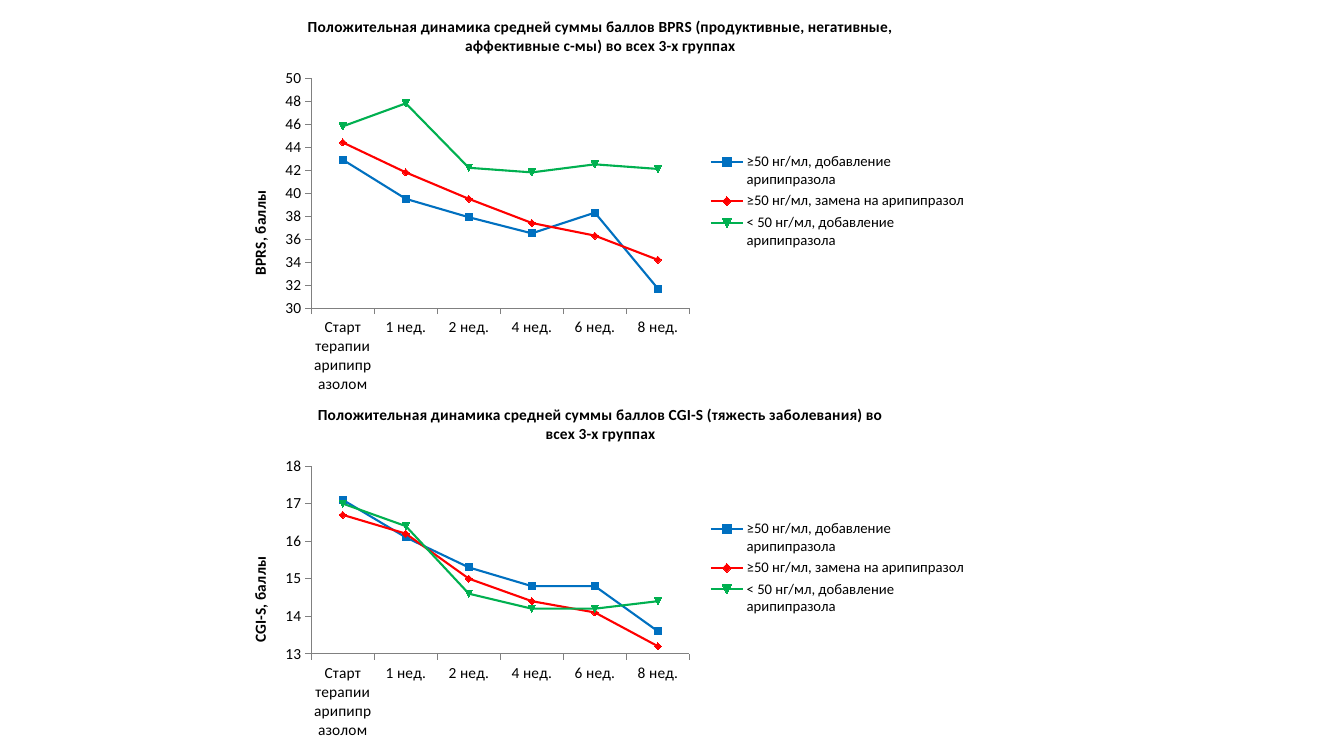
"""Builds a slide with two line charts of BPRS and CGI-S scores."""
from lxml.etree import SubElement
from pptx import Presentation
from pptx.chart.data import CategoryChartData
from pptx.dml.color import RGBColor
from pptx.enum.chart import XL_CHART_TYPE, XL_LEGEND_POSITION, XL_MARKER_STYLE, XL_TICK_MARK
from pptx.oxml.ns import qn
from pptx.util import Pt

COLORS = {"text": "000000", "axis": "808080", "blue": "0070C0", "red": "FF0000", "green": "00B050"}
WEEKS = ["Старт терапии арипипразолом"] + [f"{week} нед." for week in (1, 2, 4, 6, 8)]
GROUPS = {
    "≥50 нг/мл, добавление арипипразола": "blue",
    "≥50 нг/мл, замена на арипипразол": "red",
    "< 50 нг/мл, добавление арипипразола": "green",
}


class ScoreSlide:
    def __init__(self, slide, font="Calibri", size=11, legend_size=10.5):
        self.slide = slide
        self.font = font
        self.size = size
        self.legend_size = legend_size

    def color(self, name):
        return RGBColor.from_string(COLORS[name])

    def style(self, font, size, bold=False):
        font.name = self.font
        font.size = Pt(size)
        font.bold = bold
        font.color.rgb = self.color("text")

    def heading(self, owner, wording):
        owner.has_title = True
        run = owner.chart_title if hasattr(owner, "chart_title") else owner.axis_title
        run = run.text_frame.paragraphs[0].add_run()
        run.text = wording
        self.style(run.font, self.size, bold=True)

    def place(self, chart, xpath, index, **fractions):
        part = chart.element.xpath(xpath)[0]
        for old in part.findall(qn("c:layout")):
            part.remove(old)
        layout = SubElement(part, qn("c:layout"))
        part.insert(index, layout)
        manual = SubElement(layout, qn("c:manualLayout"))
        if "plotArea" in xpath and "title" not in xpath:
            SubElement(manual, qn("c:layoutTarget")).set("val", "inner")
        for side in ("x", "y"):
            SubElement(manual, qn(f"c:{side}Mode")).set("val", "edge")
        for side, fraction in fractions.items():
            SubElement(manual, qn(f"c:{side}")).set("val", str(fraction))

    def axis(self, axis):
        axis.has_major_gridlines = False
        axis.major_tick_mark = XL_TICK_MARK.OUTSIDE
        axis.minor_tick_mark = XL_TICK_MARK.NONE
        axis.format.line.color.rgb = self.color("axis")
        axis.format.line.width = Pt(0.75)
        self.style(axis.tick_labels.font, self.size)

    def line(self, series, name):
        series.smooth = False
        series.format.line.color.rgb = self.color(name)
        series.format.line.width = Pt(1.5)
        marker = series.marker
        marker.style = XL_MARKER_STYLE.AUTOMATIC
        marker.size = 5
        marker.format.fill.solid()
        marker.format.fill.fore_color.rgb = self.color(name)
        marker.format.line.color.rgb = self.color(name)

    def score_chart(self, title, scale, top, height, limits, step, scores, plot, legend, label):
        data = CategoryChartData(number_format="General")
        data.categories = WEEKS
        for group, values in zip(GROUPS, scores):
            data.add_series(group, values)
        frame = self.slide.shapes.add_chart(
            XL_CHART_TYPE.LINE_MARKERS, Pt(160), Pt(top), Pt(538), Pt(height), data)
        chart = frame.chart
        self.style(chart.font, 18)
        self.heading(chart, title)
        chart.chart_title.include_in_layout = False
        self.axis(chart.category_axis)
        score_axis = chart.value_axis
        self.axis(score_axis)
        score_axis.minimum_scale, score_axis.maximum_scale = limits
        score_axis.major_unit = step
        score_axis.tick_labels.number_format = "0"
        score_axis.tick_labels.number_format_is_linked = False
        self.heading(score_axis, scale)
        for series, name in zip(chart.plots[0].series, GROUPS.values()):
            self.line(series, name)
        chart.has_legend = True
        chart.legend.position = XL_LEGEND_POSITION.RIGHT
        chart.legend.include_in_layout = False
        self.style(chart.legend.font, self.legend_size)
        self.place(chart, "c:chart/c:plotArea", 0, x=0.116, y=plot[0], w=0.502, h=plot[1])
        self.place(chart, "c:chart/c:legend", 1, x=0.64, y=legend[0], w=0.35, h=legend[1])
        self.place(chart, "c:chart/c:plotArea/c:valAx/c:title", 1, x=0.03, y=label)


def main():
    deck = Presentation()
    deck.slide_width, deck.slide_height = Pt(960), Pt(540)
    page = ScoreSlide(deck.slides.add_slide(deck.slide_layouts[6]))
    page.score_chart(
        "Положительная динамика средней суммы баллов BPRS (продуктивные, негативные, "
        "аффективные с-мы) во всех 3-х группах",
        "BPRS, баллы", top=0, height=287.5, limits=(30, 50), step=2,
        scores=[
            (42.9, 39.5, 37.9, 36.5, 38.3, 31.7),
            (44.4, 41.8, 39.5, 37.4, 36.3, 34.2),
            (45.8, 47.8, 42.2, 41.8, 42.5, 42.1),
        ],
        plot=(0.194, 0.572), legend=(0.37, 0.26), label=0.466)
    page.score_chart(
        "Положительная динамика средней суммы баллов CGI-S (тяжесть заболевания) во "
        "всех 3-х группах",
        "CGI-S, баллы", top=278, height=255.5, limits=(13, 18), step=1,
        scores=[
            (17.1, 16.1, 15.3, 14.8, 14.8, 13.6),
            (16.7, 16.2, 15, 14.4, 14.1, 13.2),
            (17, 16.4, 14.6, 14.2, 14.2, 14.4),
        ],
        plot=(0.215, 0.525), legend=(0.355, 0.29), label=0.46)
    deck.save("out.pptx")


if __name__ == "__main__":
    main()
